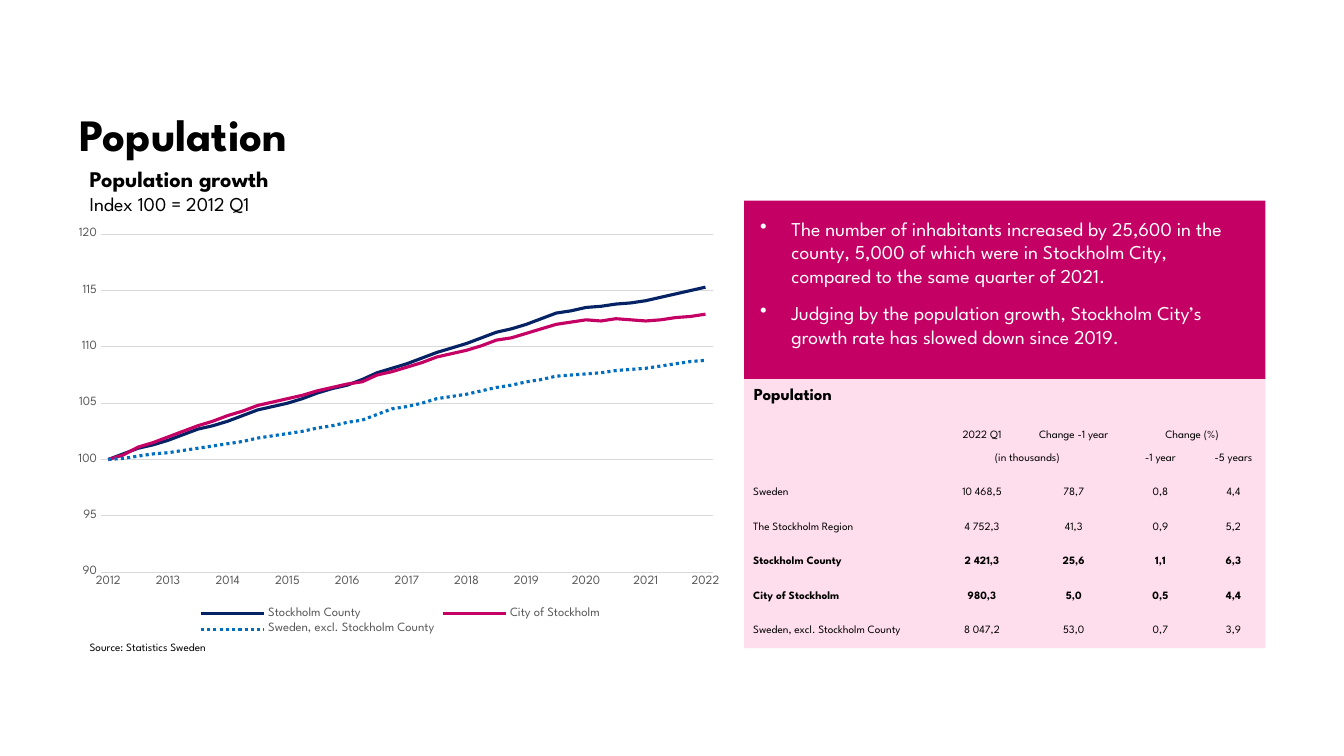
from lxml import etree
from pptx import Presentation
from pptx.chart.data import CategoryChartData
from pptx.dml.color import RGBColor
from pptx.enum.chart import XL_CHART_TYPE, XL_LEGEND_POSITION, XL_TICK_MARK
from pptx.enum.dml import MSO_LINE
from pptx.enum.shapes import MSO_SHAPE
from pptx.enum.text import MSO_ANCHOR, PP_ALIGN
from pptx.oxml import parse_xml
from pptx.oxml.ns import nsdecls, qn
from pptx.util import Emu, Pt

LINE_CHART = XL_CHART_TYPE.LINE
NO_TICK = XL_TICK_MARK.NONE
BOTTOM_LEGEND = XL_LEGEND_POSITION.BOTTOM
SOLID, DOTTED = MSO_LINE.SOLID, MSO_LINE.ROUND_DOT
RECTANGLE = MSO_SHAPE.RECTANGLE
TOP, MIDDLE, BOTTOM = MSO_ANCHOR.TOP, MSO_ANCHOR.MIDDLE, MSO_ANCHOR.BOTTOM
LEFT, CENTER = PP_ALIGN.LEFT, PP_ALIGN.CENTER

PX = 9144  # 100 px to the inch
THEME = {
    "font": "League Spartan",
    "black": RGBColor.from_string("000000"),
    "white": RGBColor.from_string("FFFFFF"),
    "magenta": RGBColor.from_string("C40064"),
    "pink": RGBColor.from_string("FEDEED"),
    "navy": RGBColor.from_string("052364"),
    "blue": RGBColor.from_string("006EBF"),
    "axis_text": RGBColor.from_string("595959"),
    "grid": RGBColor.from_string("D9D9D9"),
    "title": 32, "heading": 16, "body": 14, "label": 12, "axis": 9, "small": 8,
}
NO_TABLE_STYLE = "{2D5ABB26-0587-4C30-8999-92F81FD0307C}"


def style_font(font, size, color="black", bold=False):
    font.name = THEME["font"]
    font.size = Pt(THEME[size])
    font.color.rgb = THEME[color]
    font.bold = bold


def add_text(text, left, top, width, height, size, bold=False, wrap=True, inset=(10, 5), anchor=TOP):
    """Add a text box and return its paragraph."""
    box = page.shapes.add_textbox(left * PX, top * PX, width * PX, height * PX)
    frame = box.text_frame
    frame.word_wrap = wrap
    frame.vertical_anchor = anchor
    frame.margin_left = frame.margin_right = inset[0] * PX
    frame.margin_top = frame.margin_bottom = inset[1] * PX
    para = frame.paragraphs[0]
    span = para.add_run()
    span.text = text
    style_font(span.font, size, bold=bold)
    return para


deck = Presentation()
deck.slide_width, deck.slide_height = Emu(1333 * PX), Emu(750 * PX)
page = deck.slides.add_slide(deck.slide_layouts[6])

# Headings and source
add_text("Population", 79, 37, 922, 122, "title", bold=True, inset=(0, 0), anchor=BOTTOM)
add_text("Source: Statistics Sweden", 79, 630, 157, 24, "small", wrap=False)
chart_heading = add_text("Population growth", 79, 159, 398, 61, "heading", bold=True)
chart_heading.add_line_break()
index_note = chart_heading.add_run()
index_note.text = "Index 100 = 2012 Q1"
style_font(index_note.font, "body")

# Panels on the right
PANEL_LEFT, PANEL_WIDTH = 738, 517
panels = []
for top, height, color in ((375, 268, "pink"), (199, 177, "magenta")):
    panel = page.shapes.add_shape(RECTANGLE, PANEL_LEFT * PX, top * PX, PANEL_WIDTH * PX, height * PX)
    panel.shadow.inherit = False
    panel.fill.solid()
    panel.fill.fore_color.rgb = THEME[color]
    panel.line.fill.background()
    panels.append(panel)

findings = [
    "The number of inhabitants increased by 25,600 in the county, 5,000 of which were "
    "in Stockholm City, compared to the same quarter of 2021.",
    "Judging by the population growth, Stockholm City’s growth rate has slowed down since 2019.",
]
frame = panels[1].text_frame
frame.word_wrap = True
frame.vertical_anchor = TOP
frame.margin_left = frame.margin_right = frame.margin_top = frame.margin_bottom = 16 * PX
for number, finding in enumerate(findings):
    para = frame.add_paragraph() if number else frame.paragraphs[0]
    para.alignment = LEFT
    para.space_before = Pt(10 if number else 0)
    properties = para._p.get_or_add_pPr()
    properties.set("marL", str(31 * PX))
    properties.set("indent", str(-31 * PX))
    etree.SubElement(properties, qn("a:buChar")).set("char", "•")
    span = para.add_run()
    span.text = finding
    style_font(span.font, "body", "white")

add_text("Population", PANEL_LEFT, 376, 107, 30, "label", bold=True, wrap=False)

# Population table
rows = [
    ["", "2022 Q1", "Change -1 year", "Change (%)", ""],
    ["", "(in thousands)", "", "-1 year", "-5 years"],
    ["Sweden", "10 468,5", "78,7", "0,8", "4,4"],
    ["The Stockholm Region", "4 752,3", "41,3", "0,9", "5,2"],
    ["Stockholm County", "2 421,3", "25,6", "1,1", "6,3"],
    ["City of Stockholm", "980,3", "5,0", "0,5", "4,4"],
    ["Sweden, excl. Stockholm County", "8 047,2", "53,0", "0,7", "3,9"],
]
bold_rows = ("Stockholm County", "City of Stockholm")
column_widths = [190, 92, 90, 82, 63]
table_frame = page.shapes.add_table(
    len(rows), len(column_widths), PANEL_LEFT * PX, 403 * PX, PANEL_WIDTH * PX, 240 * PX)
table = table_frame.table
table.first_row = table.horz_banding = False
table._tbl.tblPr.find(qn("a:tableStyleId")).text = NO_TABLE_STYLE
for column, width in zip(table.columns, column_widths):
    column.width = Emu(width * PX)
for row_number, row in enumerate(rows):
    for column_number, text in enumerate(row):
        cell = table.cell(row_number, column_number)
        cell.fill.background()
        cell.vertical_anchor = MIDDLE if row_number else BOTTOM
        cell.margin_left = cell.margin_right = cell.margin_top = PX
        cell.margin_bottom = 0
        if not text:
            continue
        para = cell.text_frame.paragraphs[0]
        if column_number:
            para.alignment = CENTER
        else:
            cell.margin_left = 9 * PX
        span = para.add_run()
        span.text = text
        style_font(span.font, "small", bold=row[0] in bold_rows)
table.cell(0, 3).merge(table.cell(0, 4))
table.cell(1, 1).merge(table.cell(1, 2))

# Population growth chart, one value per quarter
series = [
    ("Stockholm County", "navy", SOLID, [
        100, 100.5, 101, 101.3, 101.7, 102.2, 102.7, 103, 103.4, 103.9, 104.4, 104.7, 105, 105.4,
        105.9, 106.3, 106.6, 107.1, 107.7, 108.1, 108.5, 109, 109.5, 109.9, 110.3, 110.8, 111.3,
        111.6, 112, 112.5, 113, 113.2, 113.5, 113.6, 113.8, 113.9, 114.1, 114.4, 114.7, 115, 115.3]),
    ("City of Stockholm", "magenta", SOLID, [
        100, 100.4, 101.1, 101.5, 102, 102.5, 103, 103.4, 103.9, 104.3, 104.8, 105.1, 105.4, 105.7,
        106.1, 106.4, 106.7, 106.9, 107.5, 107.8, 108.2, 108.6, 109.1, 109.4, 109.7, 110.1, 110.6,
        110.8, 111.2, 111.6, 112, 112.2, 112.4, 112.3, 112.5, 112.4, 112.3, 112.4, 112.6, 112.7, 112.9]),
    ("Sweden, excl. Stockholm County", "blue", DOTTED, [
        100, 100.1, 100.3, 100.5, 100.6, 100.8, 101, 101.2, 101.4, 101.6, 101.9, 102.1, 102.3, 102.5,
        102.8, 103, 103.3, 103.5, 104, 104.5, 104.7, 105, 105.4, 105.6, 105.8, 106.1, 106.4, 106.6,
        106.9, 107.1, 107.4, 107.5, 107.6, 107.7, 107.9, 108, 108.1, 108.3, 108.5, 108.7, 108.8]),
]
data = CategoryChartData(number_format="General")
data.categories = ["" if quarter % 4 else str(2012 + quarter // 4) for quarter in range(41)]
for name, _, _, values in series:
    data.add_series(name, values)
chart = page.shapes.add_chart(LINE_CHART, 67 * PX, 220 * PX, 660 * PX, 414 * PX, data).chart
chart.has_title = False
style_font(chart.font, "axis", "axis_text")
chart.has_legend = True
chart.legend.position = BOTTOM_LEGEND
chart.legend.include_in_layout = False
style_font(chart.legend.font, "axis", "axis_text")
chart.plots[0].vary_by_categories = False
for line, (_, color, dash, _) in zip(chart.plots[0].series, series):
    line.smooth = False
    line.format.line.color.rgb = THEME[color]
    line.format.line.width = Pt(2.25)
    line.format.line.dash_style = dash

years, index = chart.category_axis, chart.value_axis
for axis in (years, index):
    axis.major_tick_mark = axis.minor_tick_mark = NO_TICK
    style_font(axis.tick_labels.font, "axis", "axis_text")
    axis._element.find(qn("c:txPr")).find(qn("a:bodyPr")).set("rot", "-60000000")
index.minimum_scale, index.maximum_scale, index.major_unit = 90, 120, 5
index.format.line.fill.background()
for line in (years.format.line, index.major_gridlines.format.line):
    line.color.rgb = THEME["grid"]
    line.width = Pt(0.75)

layout = parse_xml(
    f'<c:layout {nsdecls("c")}><c:manualLayout><c:layoutTarget val="inner"/>'
    '<c:xMode val="edge"/><c:yMode val="edge"/><c:x val="0.05"/><c:y val="0.03"/>'
    '<c:w val="0.92"/><c:h val="0.81"/></c:manualLayout></c:layout>')
plot_area = chart._chartSpace.chart.plotArea
for old_layout in plot_area.findall(qn("c:layout")):
    plot_area.remove(old_layout)
plot_area.insert(0, layout)

deck.save("out.pptx")
